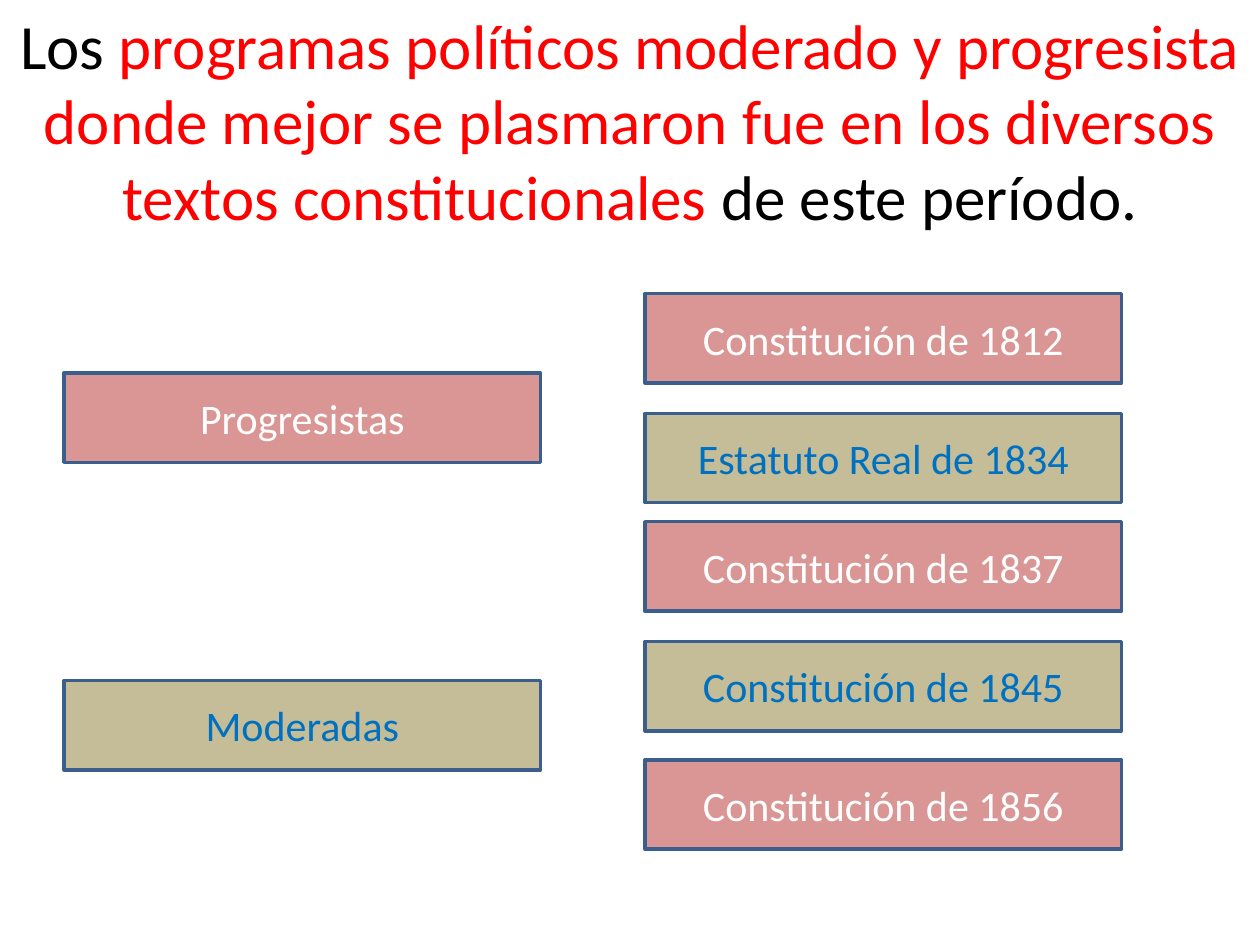
"""Build a slide that sorts Spanish constitutional texts by political party."""
from pptx import Presentation
from pptx.dml.color import RGBColor
from pptx.enum.shapes import MSO_SHAPE
from pptx.enum.text import MSO_ANCHOR, MSO_AUTO_SIZE, PP_ALIGN
from pptx.util import Inches, Pt

HUES = {"black": "000000", "red": "FF0000", "white": "FFFFFF", "blue": "0070C0",
        "rose": "D99694", "tan": "C4BD97", "edge": "3A5F8C"}
SIDES = {"prog": ("rose", "white"), "mod": ("tan", "blue")}
TITLE = [
    ("Los ", "black"),
    ("programas políticos moderado y progresista donde mejor se plasmaron "
     "fue en los diversos textos constitucionales ", "red"),
    ("de este período.", "black"),
]
COLUMNS = [
    (5.12, [
        (2.33, "Constitución de 1812", "prog"),
        (3.28, "Estatuto Real de 1834", "mod"),
        (4.14, "Constitución de 1837", "prog"),
        (5.09, "Constitución de 1845", "mod"),
        (6.03, "Constitución de 1856", "prog"),
    ]),
    (0.51, [(2.96, "Progresistas", "prog"), (5.4, "Moderadas", "mod")]),
]
BOX = (3.78, 0.71)
FRAME = {"word_wrap": True, "auto_size": MSO_AUTO_SIZE.NONE}


def tint(name):
    return RGBColor.from_string(HUES[name])


def style(item, values):
    for key, value in values.items():
        setattr(item, key, value)


def write(shape, runs, size, anchor):
    frame = shape.text_frame
    style(frame, {**FRAME, "vertical_anchor": anchor})
    line = frame.paragraphs[0]
    line.alignment = PP_ALIGN.CENTER
    for text, hue in runs:
        run = line.add_run()
        run.text = text
        style(run.font, {"name": "Calibri", "size": Pt(size)})
        run.font.color.rgb = tint(hue)


def add_box(slide, left, top, text, side):
    fill, ink = SIDES[side]
    box = slide.shapes.add_shape(
        MSO_SHAPE.RECTANGLE, *map(Inches, (left, top, *BOX)))
    box.shadow.inherit = False
    box.fill.solid()
    box.fill.fore_color.rgb = tint(fill)
    box.line.color.rgb = tint("edge")
    box.line.width = Pt(2)
    write(box, [(text, ink)], 24, MSO_ANCHOR.MIDDLE)


def main():
    deck = Presentation()
    style(deck, {"slide_width": Inches(10), "slide_height": Inches(7.5)})
    slide = deck.slides.add_slide(deck.slide_layouts[5])
    title = slide.shapes.title
    style(title, {"left": 0, "top": 0, "width": deck.slide_width,
                  "height": Inches(1.92)})
    write(title, TITLE, 36, MSO_ANCHOR.TOP)
    for left, rows in COLUMNS:
        for row in rows:
            add_box(slide, left, *row)
    deck.save("out.pptx")


if __name__ == "__main__":
    main()
